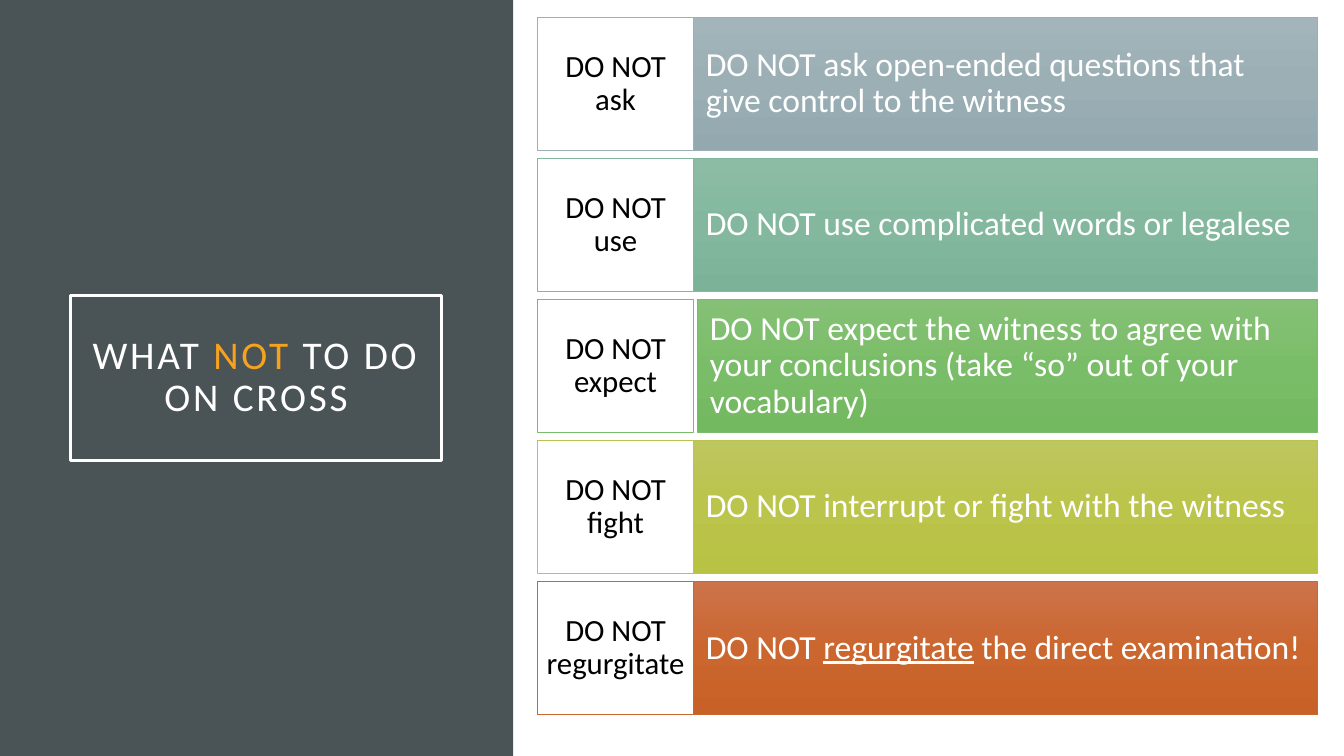
from copy import deepcopy

from pptx import Presentation
from pptx.dml.color import RGBColor
from pptx.enum.shapes import MSO_SHAPE
from pptx.enum.text import MSO_ANCHOR, PP_ALIGN
from pptx.oxml.ns import qn
from pptx.util import Inches, Pt

RECT = MSO_SHAPE.RECTANGLE
MIDDLE = MSO_ANCHOR.MIDDLE
LEFT, CENTER = PP_ALIGN.LEFT, PP_ALIGN.CENTER

SLIDE_W, SLIDE_H = 13.33, 7.5
PANEL_W = 5.09
LABEL_X, LABEL_W = 5.33, 1.55
RULE_X, RULE_RIGHT = LABEL_X + LABEL_W, 13.07
ROW_TOP, ROW_H, ROW_PITCH = 0.17, 1.32, 1.4

COLORS = {
    "panel": "4A5356",
    "accent": "F6A21D",
    "white": "FFFFFF",
    "black": "000000",
}

# Label verb, rule text as (text, underlined) runs, gradient, line, extra gap
RULES = [
    ("ask", [("ask open-ended questions that give control to the witness", False)],
     ("A3B5BB", "9BAFB5", "93A9AF"), "9BAFB5", 0),
    ("use", [("use complicated words or legalese", False)],
     ("8DBCA5", "83B89E", "7BB398"), "83B79E", 0),
    ("expect", [("expect the witness to agree with your conclusions "
                 "(take “so” out of your vocabulary)", False)],
     ("85C076", "7ABD68", "73B960"), "7ABC69", 0.04),
    ("fight", [("interrupt or fight with the witness", False)],
     ("BEC65E", "BBC44B", "B8C243"), "BAC34D", 0),
    ("regurgitate", [("regurgitate", True), (" the direct examination!", False)],
     ("CC734B", "CB662F", "C86128"), "C96731", 0),
]


def rgb(value):
    return RGBColor.from_string(value)


def add_box(slide, x, y, w, h, fill=None, line=None, line_width=0.5):
    """Add a rectangle; fill is a hex string, a tuple of gradient stops or None."""
    sp = slide.shapes.add_shape(RECT, Inches(x), Inches(y), Inches(w), Inches(h))
    sp.shadow.inherit = False
    if fill is None:
        sp.fill.background()
    elif isinstance(fill, tuple):
        fill_gradient(sp, fill)
    else:
        sp.fill.solid()
        sp.fill.fore_color.rgb = rgb(fill)
    if line:
        sp.line.color.rgb = rgb(line)
        sp.line.width = Pt(line_width)
    else:
        sp.line.fill.background()
    return sp


def fill_gradient(sp, colors):
    """Fill from top to bottom with evenly spaced colours."""
    sp.fill.gradient()
    sp.fill.gradient_angle = 270
    stop_list = next(sp._element.iter(qn("a:gsLst")))
    while len(stop_list) < len(colors):
        stop_list.append(deepcopy(stop_list[0]))
    for i, (stop, color) in enumerate(zip(sp.fill.gradient_stops, colors)):
        stop.color.rgb = rgb(color)
        stop.position = i / (len(colors) - 1)


def write(sp, runs, size, color, align=LEFT, insets=(0.1, 0.05), spacing=0):
    """Write one paragraph; each run is (text, own colour or None, underlined)."""
    tf = sp.text_frame
    tf.word_wrap = True
    tf.vertical_anchor = MIDDLE
    tf.margin_left = tf.margin_right = Inches(insets[0])
    tf.margin_top = tf.margin_bottom = Inches(insets[1])
    p = tf.paragraphs[0]
    p.alignment = align
    p.line_spacing = 0.9
    for text, own_color, underlined in runs:
        r = p.add_run()
        r.text = text
        r.font.name = "Calibri"
        r.font.size = Pt(size)
        r.font.color.rgb = rgb(own_color or color)
        if underlined:
            r.font.underline = True
        if spacing:
            r.font._element.set("spc", str(spacing * 100))


def add_title_panel(slide):
    add_box(slide, 0, 0, PANEL_W, SLIDE_H, COLORS["panel"])
    title = add_box(slide, 0.7, 2.93, 3.68, 1.64, line=COLORS["white"], line_width=2.5)
    runs = [("WHAT ", None, False), ("NOT", COLORS["accent"], False),
            (" TO DO ON CROSS", None, False)]
    write(title, runs, 28, COLORS["white"], CENTER, insets=(0.2, 0.2), spacing=2)


def add_rule(slide, row, verb, parts, gradient, line, gap):
    y = ROW_TOP + row * ROW_PITCH
    x = RULE_X + gap
    bar = add_box(slide, x, y, RULE_RIGHT - x, ROW_H, gradient, line)
    runs = [("DO NOT ", None, False)] + [(text, None, under) for text, under in parts]
    write(bar, runs, 24, COLORS["white"], insets=(0.12, 0.34))
    label = add_box(slide, LABEL_X, y, LABEL_W, ROW_H, COLORS["white"], line)
    write(label, [(f"DO NOT {verb}", None, False)], 22, COLORS["black"], CENTER,
          insets=(0.08, 0.13))


def main():
    prs = Presentation()
    prs.slide_width, prs.slide_height = Inches(SLIDE_W), Inches(SLIDE_H)
    slide = prs.slides.add_slide(prs.slide_layouts[6])
    add_title_panel(slide)
    for row, rule in enumerate(RULES):
        add_rule(slide, row, *rule)
    prs.save("out.pptx")


if __name__ == "__main__":
    main()
